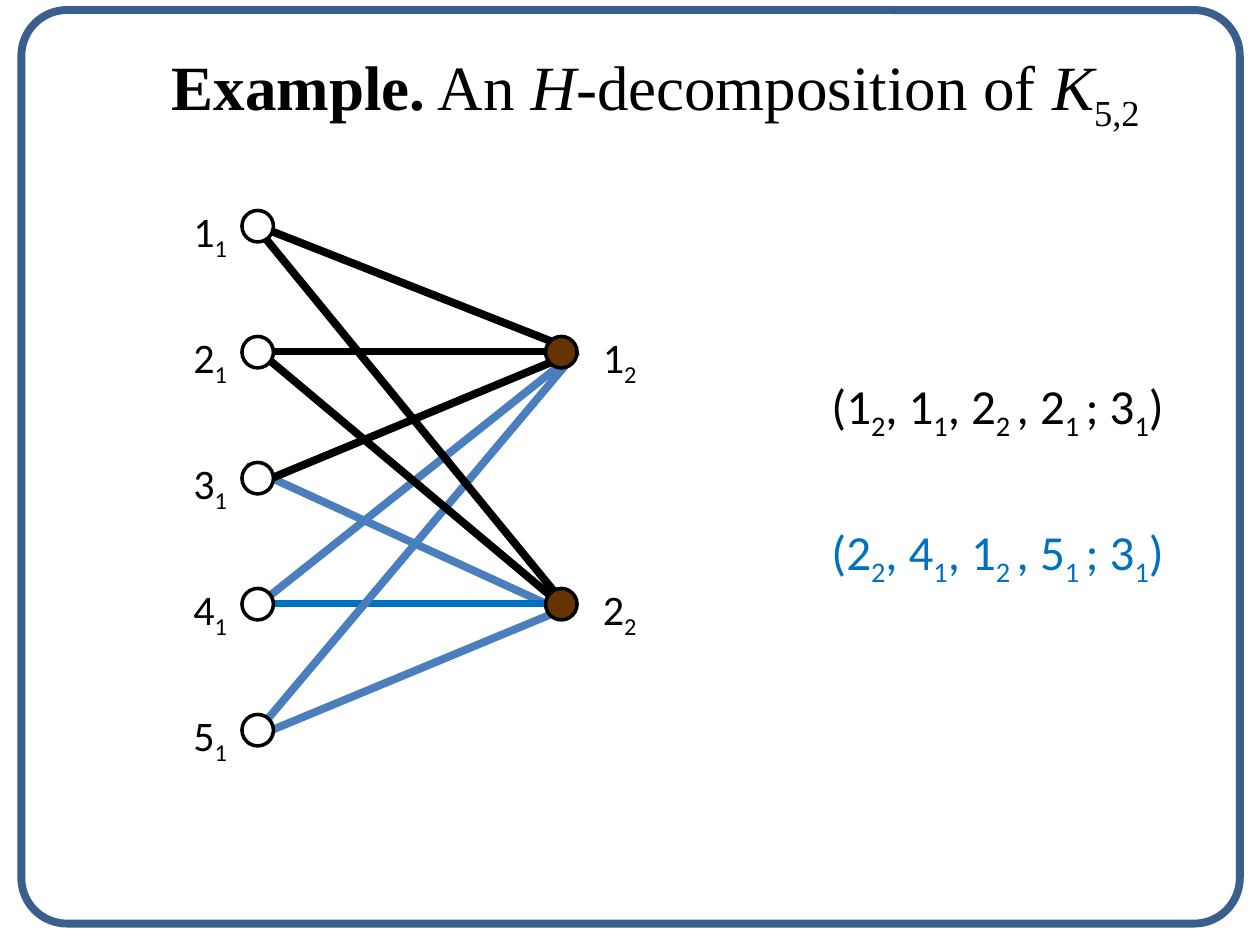
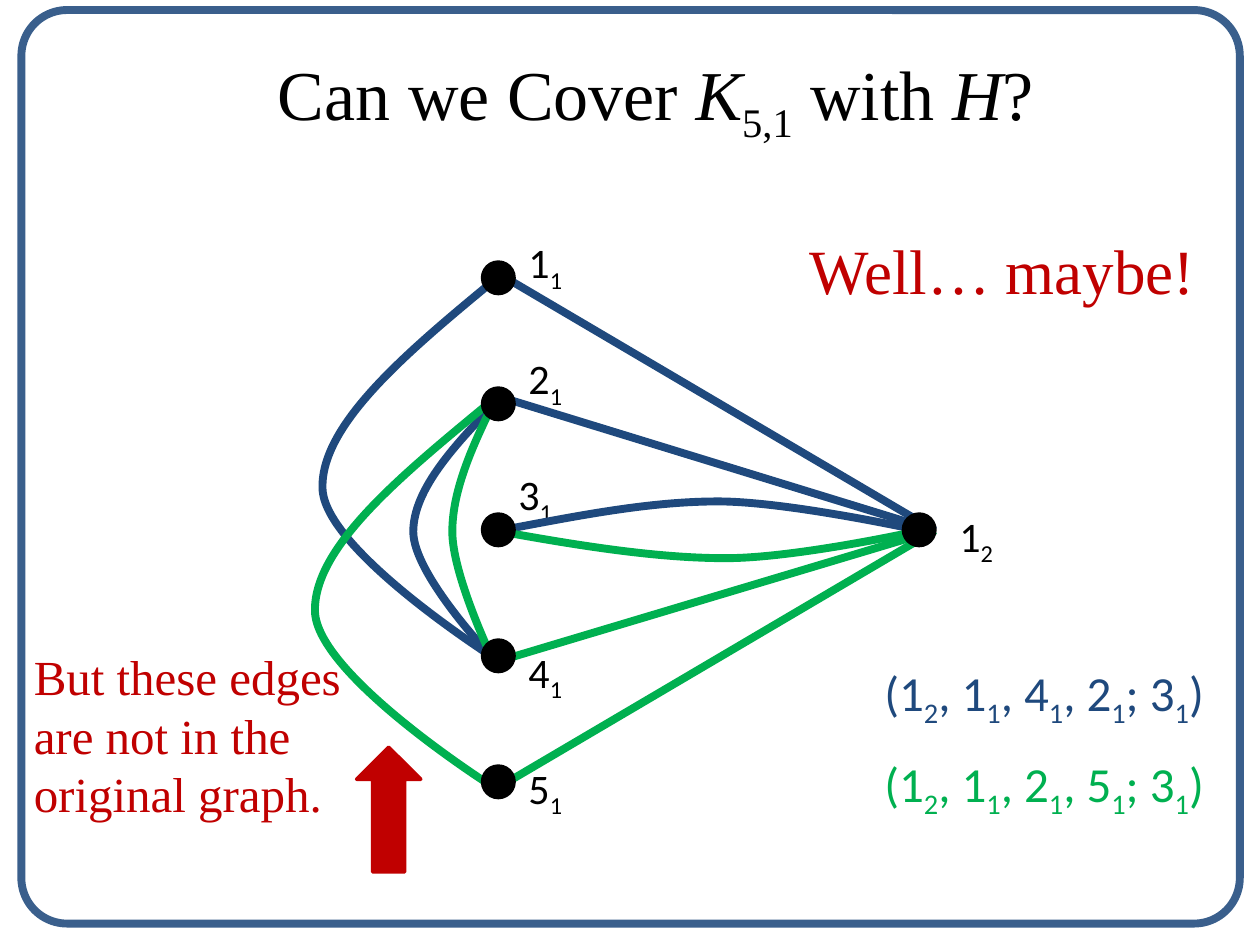
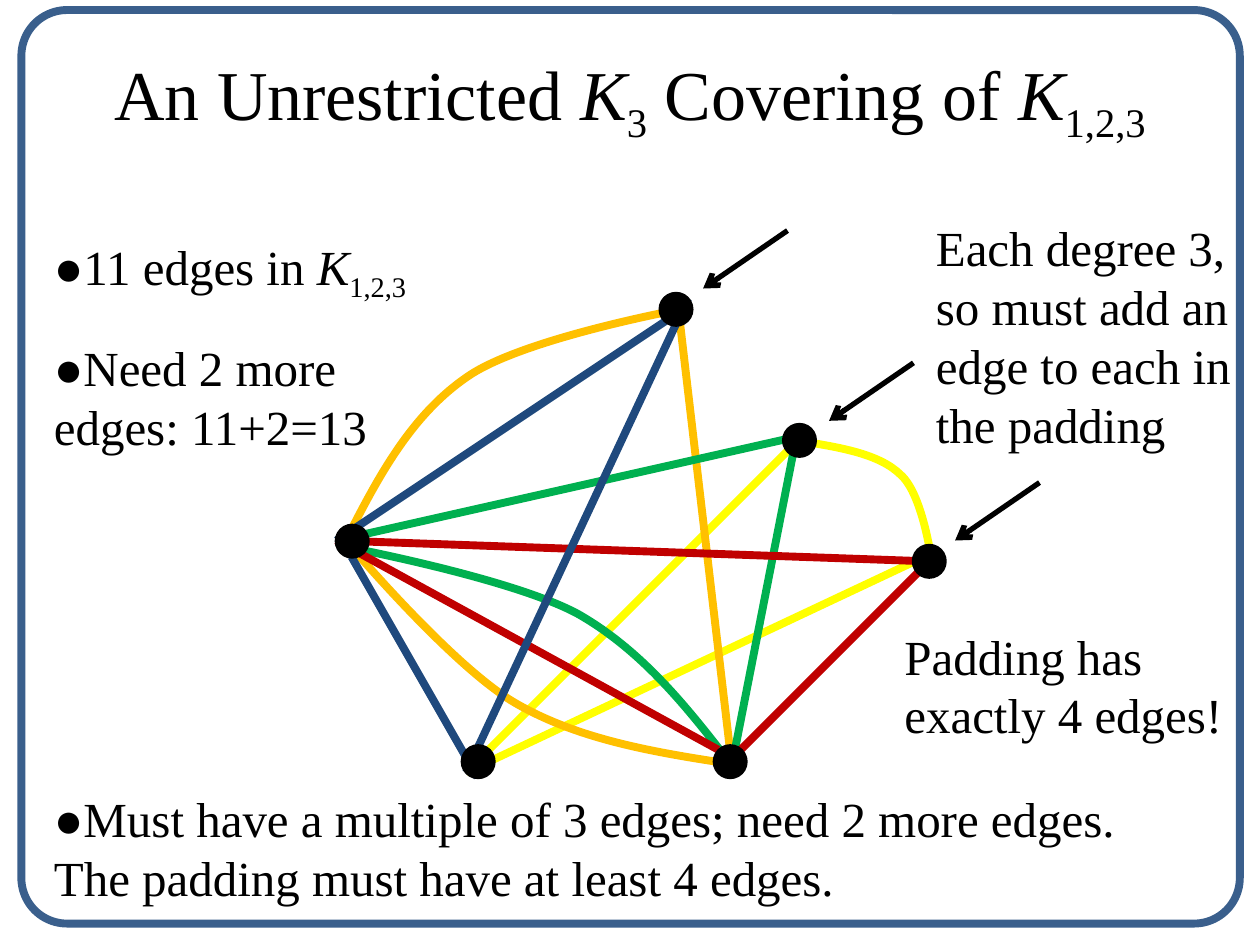
from lxml.etree import SubElement
from pptx import Presentation
from pptx.dml.color import RGBColor
from pptx.enum.shapes import MSO_CONNECTOR, MSO_SHAPE
from pptx.enum.text import MSO_ANCHOR, MSO_AUTO_SIZE, PP_ALIGN
from pptx.oxml.ns import qn
from pptx.util import Inches, Pt

COLS, ROWS = 10, 7.5
SERIF, SANS = "Times New Roman", "Calibri"
BLACK, WHITE, BROWN, FRAME = "000000", "FFFFFF", "663300", "3A5F8C"
NAVY, STEEL, BLUE = "1F497D", "4B7EBC", "0070C0"
GREEN, RED, ORANGE, YELLOW = "00B050", "C00000", "FFC000", "FFFF00"
EDGE, NODE = 4.5, 0.25


def rgb(code):
    """Turn a hex string into a colour."""
    return RGBColor.from_string(code)


class Deck:
    """Hold the shared style and the current slide, placing things on a grid."""

    def __init__(self):
        """Open a presentation and measure one grid cell."""
        self.prs = Presentation()
        self.prs.slide_width, self.prs.slide_height = Inches(10), Inches(7.5)
        self.col = self.prs.slide_width / COLS
        self.row = self.prs.slide_height / ROWS

    def at(self, *lengths):
        """Turn alternating columns and rows into slide lengths."""
        return [round(n * (self.row if i % 2 else self.col)) for i, n in enumerate(lengths)]

    def slide(self, title, box, size=40):
        """Start a framed slide with a formatted title."""
        self.s = self.prs.slides.add_slide(self.prs.slide_layouts[5])
        sp = self.s.shapes.title
        sp.left, sp.top, sp.width, sp.height = self.at(*box)
        self.set_runs(sp, title, size, BLACK, SERIF, PP_ALIGN.CENTER)
        frame = self.shape(MSO_SHAPE.ROUNDED_RECTANGLE, (0.17, 0.08, 9.67, 7.25), None, FRAME, EDGE)
        frame.adjustments[0] = 0.05

    def set_runs(self, sp, text, size, color, font, align):
        """Fill a shape with runs split by |, marked _ subscript, / italic, * bold."""
        tf = sp.text_frame
        tf.word_wrap = True
        tf.auto_size = MSO_AUTO_SIZE.SHAPE_TO_FIT_TEXT
        tf.vertical_anchor = MSO_ANCHOR.TOP
        p = tf.paragraphs[0]
        p.alignment = align
        for part in text.split("|"):
            mark = part[0] if part[0] in "_/*" else ""
            r = p.add_run()
            r.text = part[len(mark):]
            r.font.name, r.font.size = font, Pt(size)
            r.font.color.rgb = rgb(color)
            r.font.bold, r.font.italic = mark == "*", mark == "/"
            if mark == "_":
                r.font._element.set("baseline", "-25000")

    def text(self, text, box, size=28, color=BLACK, font=SERIF, align=PP_ALIGN.LEFT):
        """Add a wrapped text box."""
        self.set_runs(self.s.shapes.add_textbox(*self.at(*box)), text, size, color, font, align)

    def label(self, vertex, part, left, top):
        """Name a vertex by its number and its part."""
        self.text(f" {vertex}|_{part}", (left, top, 1.92, 0.5), 24, font=SANS, align=PP_ALIGN.CENTER)

    def style(self, sp, fill, line, width):
        """Give a shape its fill and outline without a shadow."""
        sp.shadow.inherit = False
        if fill:
            sp.fill.solid()
            sp.fill.fore_color.rgb = rgb(fill)
        else:
            sp.fill.background()
        sp.line.color.rgb, sp.line.width = rgb(line), Pt(width)
        return sp

    def shape(self, kind, box, fill, line, width=2):
        """Add a preset shape."""
        return self.style(self.s.shapes.add_shape(kind, *self.at(*box)), fill, line, width)

    def nodes(self, fill, *corners):
        """Draw a vertex at each top left corner."""
        for left, top in corners:
            self.shape(MSO_SHAPE.OVAL, (left, top, NODE, NODE), fill, BLACK)

    def edges(self, color, *ends, width=EDGE, arrow=False):
        """Draw straight edges, each given by its two ends."""
        for end in ends:
            line = self.s.shapes.add_connector(MSO_CONNECTOR.STRAIGHT, *self.at(*end))
            line.line.color.rgb, line.line.width = rgb(color), Pt(width)
            props = line._element.spPr
            if arrow:
                SubElement(props.find(qn("a:ln")), qn("a:tailEnd"), type="arrow")
            SubElement(props, qn("a:effectLst"))

    def curve(self, color, *points):
        """Draw an edge of cubic arcs: a start, then two controls and an end per arc."""
        start, *rest = [self.at(*point) for point in points]
        builder = self.s.shapes.build_freeform(*start)
        builder.add_line_segments(rest, close=False)
        sp = self.style(builder.convert_to_shape(), None, color, EDGE)
        steps = list(sp._element.iter(qn("a:lnTo")))
        outline = steps[0].getparent()
        for i in range(0, len(steps), 3):
            arc = SubElement(outline, qn("a:cubicBezTo"))
            for step in steps[i:i + 3]:
                arc.append(step[0])
                outline.remove(step)


def decomposition(deck):
    """Show the decomposition of the 5 by 2 bipartite graph."""
    deck.slide("*Example.| An |/H|-decomposition of |/K|_5,2", (0.83, 0.33, 8.75, 0.71), 36)
    deck.edges(STEEL, (4.33, 4.79, 1.95, 3.7), (4.58, 4.79, 1.95, 5.88))
    deck.edges(BLUE, (4.58, 4.79, 1.92, 4.79))
    deck.edges(STEEL, (4.58, 2.79, 2.13, 5.7), (4.58, 2.79, 1.95, 4.88))
    deck.edges(BLACK, (4.58, 2.79, 1.95, 3.88), (1.95, 1.7, 4.55, 4.88), (1.95, 2.7, 4.55, 4.88),
               (4.33, 2.79, 1.92, 2.79), (2.04, 1.79, 4.58, 2.79))
    deck.nodes(WHITE, *[(1.92, i + 0.67) for i in range(1, 6)])
    deck.nodes(BROWN, (4.33, 2.67), (4.33, 4.67))
    for i in range(1, 6):
        deck.label(i, 1, 0.67, i + 0.58)
    for i in (1, 2):
        deck.label(i, 2, 3.92, 2 * i + 0.58)
    deck.text("(1|_2|, 1|_1|, 2|_2 |, 2|_1 |; 3|_1|)", (6.5, 2.93, 3.08, 0.57), font=SANS)
    deck.text("(2|_2|, 4|_1|, 1|_2 |, 5|_1 |; 3|_1|)", (6.5, 4.09, 3.08, 0.57), color=BLUE, font=SANS)


def covering(deck):
    """Show two copies of H laid over the star with five leaves."""
    deck.slide("Can we Cover |/K|_5,1| with |/H|?", (1.33, 0.35, 7.75, 0.77))
    deck.label(1, 2, 6.75, 4)
    for i, (left, top) in enumerate([(3.33, 1.83), (3.33, 2.75), (3.25, 3.67), (3.33, 5.08), (3.33, 6)], 1):
        deck.label(i, 1, left, top)
    deck.edges(NAVY, (3.87, 2.12, 7.42, 4.21), (3.87, 3.12, 7.42, 4.21))
    deck.curve(NAVY, (3.97, 4.21), (4.56, 4.1), (5.14, 3.98), (5.7, 3.98),
               (6.25, 3.98), (7.3, 4.21), (7.3, 4.21))
    deck.curve(GREEN, (3.98, 4.22), (4.59, 4.33), (5.21, 4.43), (5.76, 4.43),
               (6.32, 4.43), (7.31, 4.21), (7.31, 4.21))
    deck.edges(GREEN, (4.08, 5.21, 7.42, 4.21), (3.87, 6.3, 7.42, 4.21))
    deck.curve(NAVY, (3.96, 3.17), (3.62, 3.52), (3.28, 3.88), (3.28, 4.22),
               (3.28, 4.56), (3.9, 5.21), (3.9, 5.21))
    deck.curve(NAVY, (3.94, 2.21), (3.25, 2.78), (2.55, 3.36), (2.56, 3.87),
               (2.56, 4.37), (3.98, 5.26), (3.98, 5.26))
    deck.curve(GREEN, (3.93, 3.17), (3.76, 3.52), (3.59, 3.88), (3.59, 4.22),
               (3.59, 4.56), (3.9, 5.21), (3.9, 5.21))
    deck.curve(GREEN, (3.88, 3.2), (3.19, 3.77), (2.49, 4.34), (2.5, 4.85),
               (2.51, 5.36), (3.92, 6.25), (3.92, 6.25))
    deck.nodes(BLACK, (7.17, 4.08), *[(3.83, i + 1.08) for i in range(1, 6)])
    deck.text("(1|_2|, 1|_1|, 4|_1|, 2|_1|; 3|_1|)", (6.92, 5.21, 2.92, 0.57), color=NAVY, font=SANS)
    deck.text("(1|_2|, 1|_1|, 2|_1|, 5|_1|; 3|_1|)", (6.92, 5.93, 2.92, 0.57), color=GREEN, font=SANS)
    deck.text("Well… maybe!", (6.33, 1.79, 3.5, 0.71), 36, RED)
    deck.text("But these edges are not in the original graph.", (0.17, 5.08, 3.17, 1.51), color=RED)
    deck.shape(MSO_SHAPE.UP_ARROW, (2.83, 5.93, 0.51, 0.99), RED, RED)


def unrestricted(deck):
    """Show the triangle covering and the count of its padding."""
    deck.slide("An Unrestricted |/K|_3| Covering of |/K|_1,2,3 ", (0.5, 0.35, 9.08, 0.77))
    deck.edges(YELLOW, (3.7, 6.13, 7.25, 4.46), (3.7, 6.13, 6.25, 3.58))
    deck.curve(YELLOW, (6.35, 3.5), (6.66, 3.55), (6.98, 3.6), (7.15, 3.77),
               (7.33, 3.93), (7.4, 4.49), (7.4, 4.49))
    deck.curve(GREEN, (5.79, 6.05), (5.45, 5.61), (5.1, 5.17), (4.6, 4.88),
               (4.1, 4.6), (2.79, 4.35), (2.79, 4.35))
    deck.curve(ORANGE, (2.76, 4.26), (3.01, 3.77), (3.27, 3.29), (3.71, 2.99),
               (4.14, 2.69), (5.38, 2.46), (5.38, 2.46))
    deck.curve(ORANGE, (5.78, 6.06), (5.19, 5.97), (4.59, 5.87), (4.09, 5.58),
               (3.59, 5.29), (2.77, 4.32), (2.77, 4.32))
    deck.edges(ORANGE, (5.79, 5.92, 5.37, 2.33))
    deck.edges(GREEN, (5.79, 6.17, 6.34, 3.37), (2.67, 4.29, 6.22, 3.49))
    deck.edges(RED, (5.7, 5.95, 2.67, 4.29), (5.7, 6.13, 7.46, 4.37), (2.67, 4.29, 7.5, 4.46))
    deck.edges(NAVY, (3.79, 6.17, 2.79, 4.42), (5.46, 2.37, 3.7, 6.13), (2.67, 4.29, 5.28, 2.55))
    deck.nodes(BLACK, (5.24, 2.33), (6.22, 3.37), (7.25, 4.33), (5.67, 5.92), (3.67, 5.92), (2.67, 4.17))
    for left, top in [(5.58, 1.83), (6.58, 2.88), (7.58, 3.83)]:
        deck.edges(BLACK, (left + 0.67, top, left, top + 0.46), width=3, arrow=True)
    deck.text("●11 edges in |/K|_1,2,3", (0.33, 1.83, 3.58, 0.57))
    deck.text("Each degree 3, so must add an edge to each in the padding", (7.33, 1.68, 2.67, 1.99))
    deck.text("●Need 2 more edges: 11+2=13", (0.33, 2.63, 3.33, 1.04))
    deck.text("●Must have a multiple of 3 edges; need 2 more edges. The padding must have at least 4 edges.",
              (0.33, 6.21, 9.25, 1.04))
    deck.text("Padding has exactly 4 edges!", (7.08, 4.92, 2.83, 1.04))


def main():
    """Build the slides and save them."""
    deck = Deck()
    for build in (decomposition, covering, unrestricted):
        build(deck)
    deck.prs.save("out.pptx")


if __name__ == "__main__":
    main()
